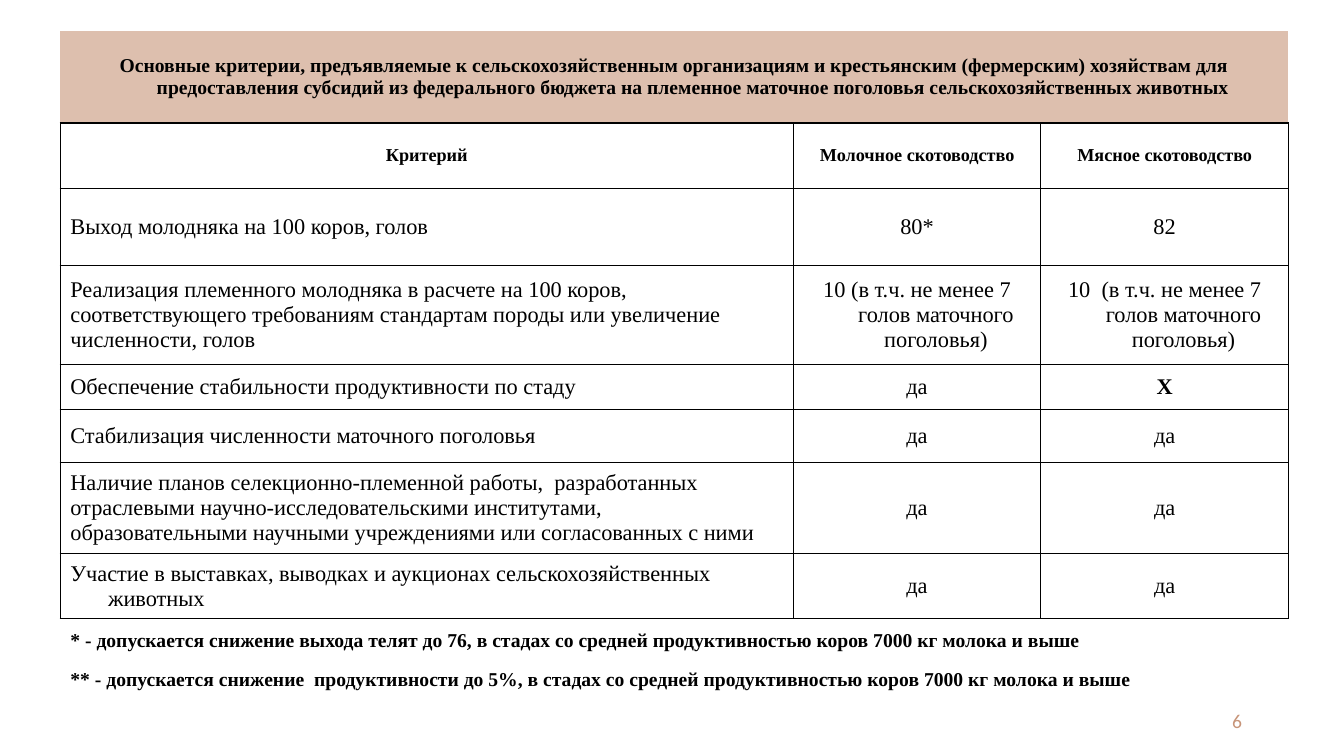
from dataclasses import dataclass

from lxml.etree import SubElement
from pptx import Presentation
from pptx.dml.color import RGBColor
from pptx.enum.text import MSO_ANCHOR, PP_ALIGN
from pptx.oxml.ns import qn
from pptx.util import Cm, Pt


@dataclass(frozen=True)
class Theme:
    """Colours, fonts, type sizes and table measures of the slide."""
    ink: str = "000000"
    band: str = "DDBFAE"
    accent: str = "C79478"
    body_font: str = "Times New Roman"
    number_font: str = "Calibri"
    body_size: int = 16
    heading_size: int = 13
    strong_size: int = 14
    hanging: float = 0.95
    rule: int = 1


@dataclass(frozen=True)
class Criterion:
    """One criterion with its values for dairy and beef cattle."""
    name: str
    dairy: str
    beef: str
    height: float
    hanging: bool = True


TITLE = ("Основные критерии, предъявляемые к сельскохозяйственным организациям и "
         "крестьянским (фермерским) хозяйствам для предоставления субсидий из федерального "
         "бюджета на племенное маточное поголовья сельскохозяйственных животных")
HEADINGS = ["Критерий", "Молочное скотоводство", "Мясное скотоводство"]
CRITERIA = [
    Criterion("Выход молодняка на 100 коров, голов", "80*", "82", 1.93),
    Criterion("Реализация племенного молодняка в расчете на 100 коров, соответствующего "
              "требованиям стандартам породы или увеличение численности, голов",
              "10 (в т.ч. не менее 7 голов маточного поголовья)",
              "10  (в т.ч. не менее 7 голов маточного поголовья)", 2.51, hanging=False),
    Criterion("Обеспечение стабильности продуктивности по стаду", "да", "Х", 1.12),
    Criterion("Стабилизация численности маточного поголовья", "да", "да", 1.35),
    Criterion("Наличие планов селекционно-племенной работы,  разработанных отраслевыми "
              "научно-исследовательскими институтами, образовательными научными "
              "учреждениями или согласованных с ними", "да", "да", 2.13, hanging=False),
    Criterion("Участие в выставках, выводках и аукционах сельскохозяйственных животных",
              "да", "да", 1.65),
]
FOOTNOTES = [
    "* - допускается снижение выхода телят до 76, в стадах со средней "
    "продуктивностью коров 7000 кг молока и выше",
    "** - допускается снижение  продуктивности до 5%, в стадах со средней "
    "продуктивностью коров 7000 кг молока и выше",
]
TITLE_HEIGHT, HEADING_HEIGHT = 2.31, 1.65
FOOTNOTE_HEIGHTS = [1.09, 0.91]
COLUMN_WIDTHS = [18.47, 6.24, 6.24]


def write(frame, text, *, font, size, color, bold=False, align=PP_ALIGN.LEFT, hanging=0):
    """Put one formatted paragraph into a text frame."""
    paragraph = frame.paragraphs[0]
    paragraph.alignment = align
    if hanging:
        properties = paragraph._p.get_or_add_pPr()
        properties.set("marL", str(Cm(hanging)))
        properties.set("indent", str(-Cm(hanging)))
    run = paragraph.add_run()
    run.text = text
    run.font.name, run.font.size, run.font.bold = font, Pt(size), bold
    run.font.color.rgb = RGBColor.from_string(color)


class SlideBuilder:
    """Draws themed elements on the current slide."""

    def __init__(self, slide, theme):
        self.slide = slide
        self.theme = theme

    def page_number(self, text, left, top, width, height):
        """Add the right-aligned page number."""
        frame = self.slide.shapes.add_textbox(
            Cm(left), Cm(top), Cm(width), Cm(height)).text_frame
        frame.word_wrap = True
        frame.vertical_anchor = MSO_ANCHOR.MIDDLE
        write(frame, text, font=self.theme.number_font, size=self.theme.strong_size,
              color=self.theme.accent, align=PP_ALIGN.RIGHT)

    def table(self, left, top, widths, heights):
        """Add an unstyled table with the given column widths and row heights."""
        table = self.slide.shapes.add_table(
            len(heights), len(widths), Cm(left), Cm(top),
            Cm(sum(widths)), Cm(sum(heights))).table
        table.first_row = table.horz_banding = False
        for column, width in zip(table.columns, widths):
            column.width = Cm(width)
        for row, height in zip(table.rows, heights):
            row.height = Cm(height)
        return table

    def cell(self, cell, text, *, size=None, hanging=True, **style):
        """Fill a table cell with text."""
        cell.vertical_anchor = MSO_ANCHOR.MIDDLE
        write(cell.text_frame, text, font=self.theme.body_font, color=self.theme.ink,
              size=size or self.theme.body_size,
              hanging=self.theme.hanging if hanging else 0, **style)

    def wide_row(self, table, index, text, **style):
        """Merge a whole row and write bold text in it."""
        cells = list(table.rows[index].cells)
        cells[0].merge(cells[-1])
        self.cell(cells[0], text, size=self.theme.strong_size, bold=True, **style)

    def finish_cell(self, cell, sides, fill=None):
        """Set the ruled sides and the fill of a cell."""
        properties = cell._tc.get_or_add_tcPr()
        for side in "LRTB":
            line = SubElement(properties, qn(f"a:ln{side}"), w=str(Pt(self.theme.rule)))
            if side in sides:
                solid = SubElement(line, qn("a:solidFill"))
                SubElement(solid, qn("a:srgbClr"), val=self.theme.ink)
            else:
                SubElement(line, qn("a:noFill"))
        if fill:
            cell.fill.solid()
            cell.fill.fore_color.rgb = RGBColor.from_string(fill)
        else:
            cell.fill.background()

    def criteria_table(self, left, top):
        """Add the title band, the criteria grid and the footnotes."""
        heights = [TITLE_HEIGHT, HEADING_HEIGHT, *(c.height for c in CRITERIA),
                   *FOOTNOTE_HEIGHTS]
        table = self.table(left, top, COLUMN_WIDTHS, heights)
        self.wide_row(table, 0, TITLE, align=PP_ALIGN.CENTER)
        for column, heading in enumerate(HEADINGS):
            self.cell(table.cell(1, column), heading, size=self.theme.heading_size,
                      bold=True, align=PP_ALIGN.CENTER)
        for row, criterion in enumerate(CRITERIA, start=2):
            self.cell(table.cell(row, 0), criterion.name, hanging=criterion.hanging)
            for column, value in enumerate((criterion.dairy, criterion.beef), start=1):
                self.cell(table.cell(row, column), value, bold=value == "Х",
                          align=PP_ALIGN.CENTER)
        first_note = 2 + len(CRITERIA)
        for row, footnote in enumerate(FOOTNOTES, start=first_note):
            self.wide_row(table, row, footnote)
        sides = {0: "B", first_note: "T", first_note + 1: ""}
        for index, row in enumerate(table.rows):
            for cell in row.cells:
                self.finish_cell(cell, sides.get(index, "LRTB"),
                                 self.theme.band if index == 0 else None)


def main():
    """Build and save the presentation."""
    presentation = Presentation()
    presentation.slide_width, presentation.slide_height = Cm(33.87), Cm(19.05)
    slide = presentation.slides.add_slide(presentation.slide_layouts[6])
    builder = SlideBuilder(slide, Theme())
    builder.page_number("6", 23.93, 17.65, 7.62, 1.02)
    builder.criteria_table(1.52, 0.79)
    presentation.save("out.pptx")


if __name__ == "__main__":
    main()
